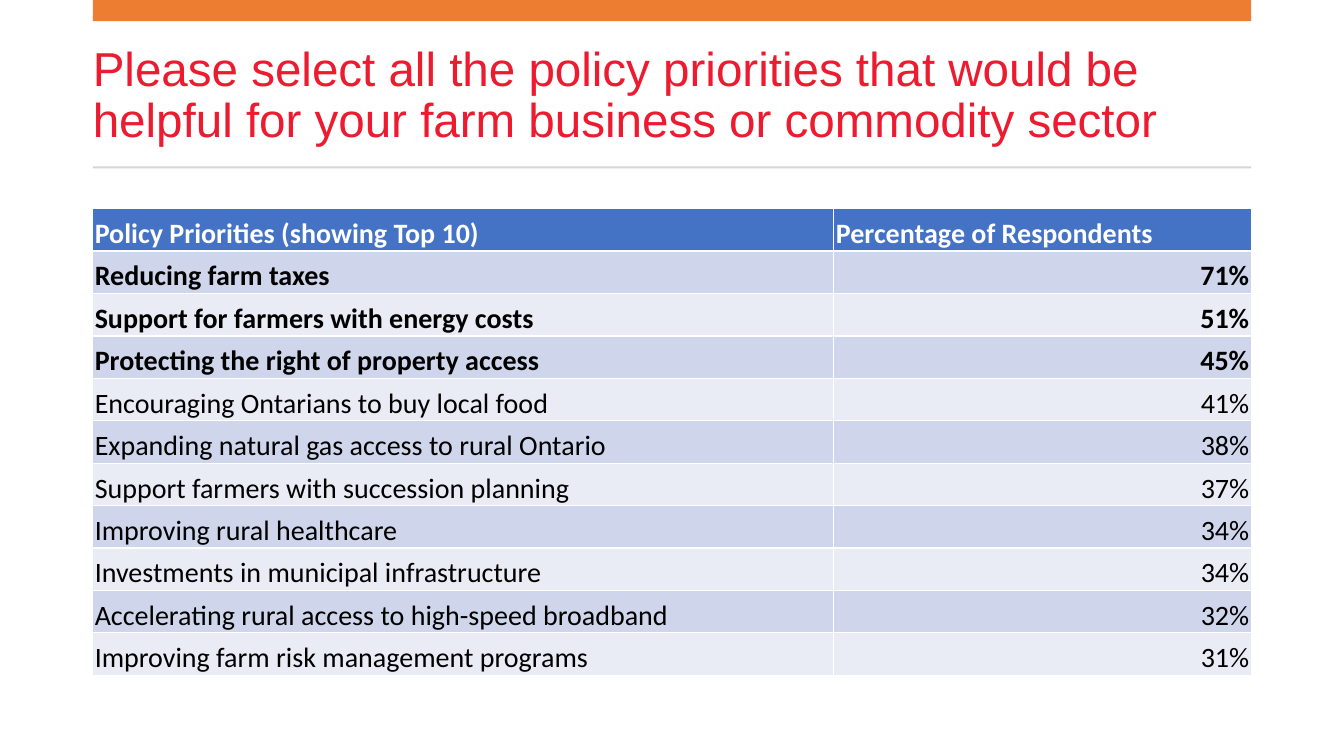
from pptx import Presentation
from pptx.dml.color import RGBColor
from pptx.enum import shapes, text
from pptx.util import Inches, Pt

COLORS = {
    "title": "ED1B2F", "bar": "ED7D31", "rule": "D5D5D5", "header": "4472C4",
    "odd": "CFD5EA", "even": "E9EBF5", "white": "FFFFFF", "black": "000000",
}
LEFT, WIDTH = 0.92, 11.49
HEADINGS = ("Policy Priorities (showing Top 10)", "Percentage of Respondents")
PRIORITIES = [
    ("Reducing farm taxes", 71),
    ("Support for farmers with energy costs", 51),
    ("Protecting the right of property access", 45),
    ("Encouraging Ontarians to buy local food", 41),
    ("Expanding natural gas access to rural Ontario", 38),
    ("Support farmers with succession planning", 37),
    ("Improving rural healthcare", 34),
    ("Investments in municipal infrastructure", 34),
    ("Accelerating rural access to high-speed broadband", 32),
    ("Improving farm risk management programs", 31),
]
BOLD_ROWS = 4  # header and top three


def rgb(name):
    return RGBColor.from_string(COLORS[name])


def style_font(font, face, size, color, bold=False):
    font.name, font.size, font.bold = face, Pt(size), bold
    font.color.rgb = rgb(color)


def add_band(s, left, top, width, height, color):
    sp = s.shapes.add_shape(shapes.MSO_SHAPE.RECTANGLE, Inches(left), Inches(top),
                            Inches(width), Inches(height))
    sp.shadow.inherit = False
    sp.fill.solid()
    sp.fill.fore_color.rgb = rgb(color)
    sp.line.fill.background()


def set_title(s, left, top, width, height):
    sp = s.shapes.title
    sp.left, sp.top = Inches(left), Inches(top)
    sp.width, sp.height = Inches(width), Inches(height)
    tf = sp.text_frame
    tf.text = ("Please select all the policy priorities that would be helpful "
               "for your farm business or commodity sector")
    tf.word_wrap = True
    tf.auto_size = text.MSO_AUTO_SIZE.NONE
    tf.vertical_anchor = text.MSO_ANCHOR.MIDDLE
    tf.margin_left = tf.margin_right = tf.margin_top = tf.margin_bottom = 0
    p = tf.paragraphs[0]
    p.alignment = text.PP_ALIGN.LEFT
    p.line_spacing = 0.9
    style_font(p.runs[0].font, "Arial", 34, "title")


def fill_cell(cell, words, row, column):
    cell.fill.solid()
    cell.fill.fore_color.rgb = rgb("header" if row == 0 else "odd" if row % 2 else "even")
    cell.vertical_anchor = text.MSO_ANCHOR.BOTTOM
    cell.margin_left = cell.margin_right = cell.margin_top = Inches(0.02)
    cell.margin_bottom = 0
    cell.text_frame.text = words
    p = cell.text_frame.paragraphs[0]
    p.alignment = text.PP_ALIGN.RIGHT if row and column else text.PP_ALIGN.LEFT
    style_font(p.runs[0].font, "Calibri", 20, "black" if row else "white", row < BOLD_ROWS)


def add_priorities(s, left, top, width, height):
    rows = [HEADINGS] + [(name, f"{share}%") for name, share in PRIORITIES]
    table = s.shapes.add_table(len(rows), 2, Inches(left), Inches(top),
                               Inches(width), Inches(height)).table
    name_width = 7.35
    table.columns[0].width = Inches(name_width)
    table.columns[1].width = Inches(width - name_width)
    for row, entries in enumerate(rows):
        for column, words in enumerate(entries):
            fill_cell(table.cell(row, column), words, row, column)


def main():
    prs = Presentation()
    prs.slide_width, prs.slide_height = Inches(13.33), Inches(7.5)
    s = prs.slides.add_slide(prs.slide_layouts[5])
    set_title(s, LEFT, 0.37, WIDTH, 1.18)
    add_band(s, LEFT, 0, WIDTH, 0.21, "bar")
    add_band(s, LEFT, 1.65, WIDTH, 0.02, "rule")
    add_priorities(s, LEFT, 2.07, WIDTH, 4.63)
    prs.save("out.pptx")


if __name__ == "__main__":
    main()
